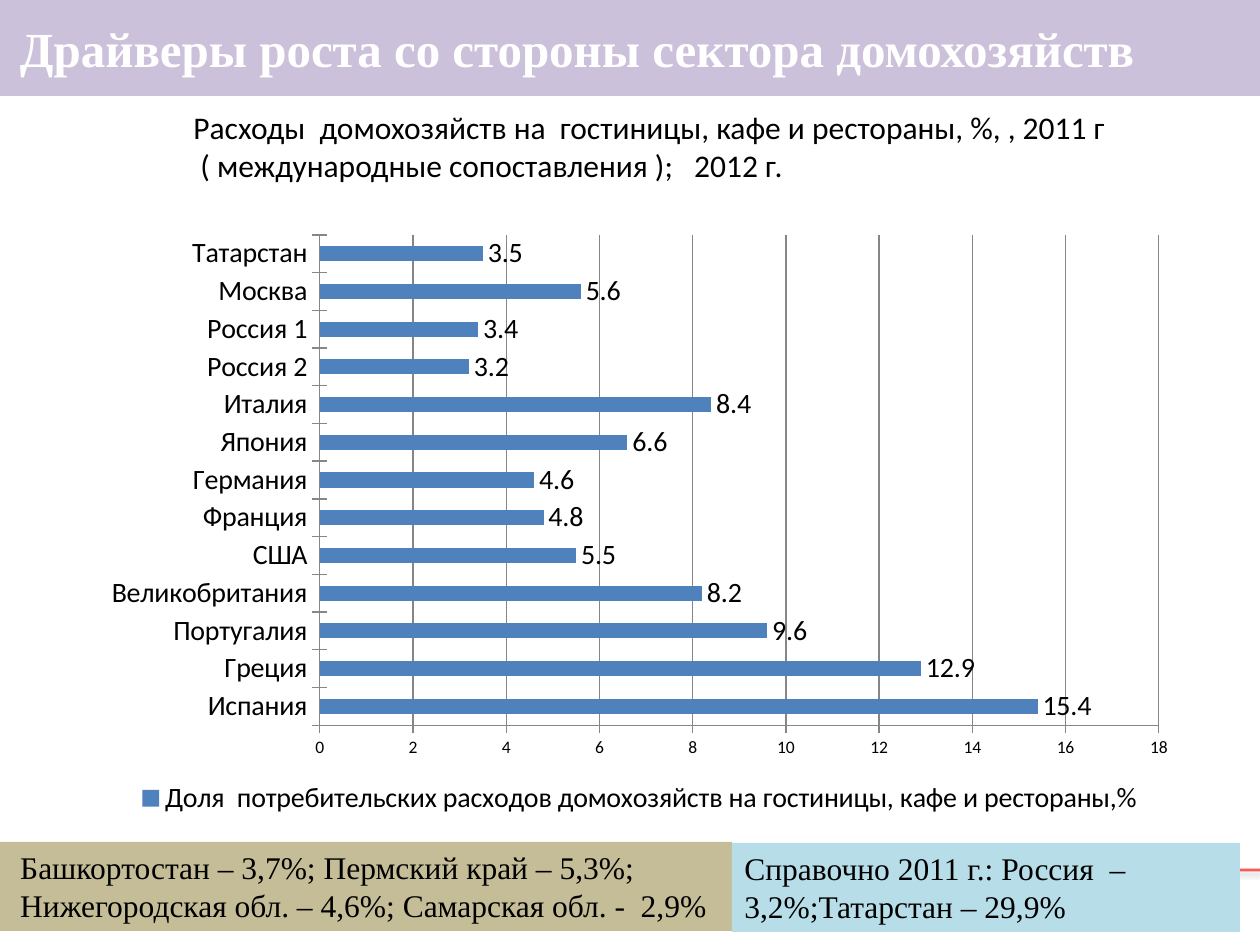
from dataclasses import dataclass

from lxml import etree
from pptx import Presentation
from pptx.chart.data import CategoryChartData
from pptx.dml.color import RGBColor
from pptx.enum.chart import XL_CHART_TYPE, XL_LABEL_POSITION, XL_LEGEND_POSITION, XL_TICK_MARK
from pptx.enum.shapes import MSO_CONNECTOR
from pptx.enum.text import MSO_ANCHOR, MSO_AUTO_SIZE, PP_ALIGN
from pptx.oxml import parse_xml
from pptx.oxml.ns import nsdecls, qn
from pptx.util import Emu, Pt

BAR = XL_CHART_TYPE.BAR_CLUSTERED
BOTTOM = XL_LEGEND_POSITION.BOTTOM
OUTSIDE = XL_LABEL_POSITION.OUTSIDE_END
CROSS = XL_TICK_MARK.CROSS
STRAIGHT = MSO_CONNECTOR.STRAIGHT
MIDDLE = MSO_ANCHOR.MIDDLE
FIT = MSO_AUTO_SIZE.SHAPE_TO_FIT_TEXT
JUSTIFY = PP_ALIGN.JUSTIFY


@dataclass(frozen=True)
class Theme:
    sans: str = "Calibri"
    serif: str = "Times New Roman"
    ink: str = "000000"
    white: str = "FFFFFF"
    lilac: str = "CCC1DA"
    sand: str = "C4BD97"
    aqua: str = "B7DEE8"
    blue: str = "4F81BD"
    gray: str = "868686"
    red: str = "FF0000"
    head: int = 28
    body: int = 18
    label: int = 16
    small: int = 10


def px(n):
    return Emu(round(n * 914400 / 126))


def rgb(code):
    return RGBColor.from_string(code)


class Deck:
    def __init__(self, theme):
        self.theme = theme
        self.prs = Presentation()
        self.prs.slide_width, self.prs.slide_height = px(1260), px(945)
        self.slide = self.prs.slides.add_slide(self.prs.slide_layouts[5])

    def font(self, font, size, name=None, color=None, bold=False):
        font.size, font.bold = Pt(size), bold
        font.name = name or self.theme.sans
        font.color.rgb = rgb(color or self.theme.ink)

    def title(self, text, x, y, w, h):
        t, box = self.theme, self.slide.shapes.title
        box.left, box.top, box.width, box.height = map(px, (x, y, w, h))
        box.fill.solid()
        box.fill.fore_color.rgb = rgb(t.lilac)
        frame = box.text_frame
        frame.text = text
        frame.vertical_anchor = MIDDLE
        frame.margin_left, frame.margin_right = px(20), px(13)
        frame.margin_top = frame.margin_bottom = px(5)
        para = frame.paragraphs[0]
        para.alignment = JUSTIFY
        self.font(para.runs[0].font, t.head, t.serif, t.white, True)

    def text(self, text, x, y, w, h, name, fill=None, wrap=False):
        box = self.slide.shapes.add_textbox(*map(px, (x, y, w, h)))
        if fill:
            box.fill.solid()
            box.fill.fore_color.rgb = rgb(fill)
        frame = box.text_frame
        frame.text = text
        frame.word_wrap, frame.auto_size = wrap, FIT
        for para in frame.paragraphs:
            for run in para.runs:
                self.font(run.font, self.theme.body, name)

    def rule(self, y):
        line = self.slide.shapes.add_connector(STRAIGHT, 0, px(y), px(1260), px(y))
        line.line.width = Pt(1.5)
        line.line.color.rgb = rgb(self.theme.red)
        # Transparency and soft shadow
        props = line._element.spPr
        color = props.find(".//" + qn("a:srgbClr"))
        etree.SubElement(color, qn("a:alpha")).set("val", "64000")
        props.append(parse_xml(
            f'<a:effectLst {nsdecls("a")}><a:outerShdw blurRad="39370" dist="20320" '
            'dir="5400000" rotWithShape="0"><a:srgbClr val="000000">'
            '<a:alpha val="38000"/></a:srgbClr></a:outerShdw></a:effectLst>'))

    def chart(self, name, rows, x, y, w, h, plot):
        t, data = self.theme, CategoryChartData()
        data.categories = [cat for cat, _ in rows]
        data.add_series(name, [val for _, val in rows])
        frame = self.slide.shapes.add_chart(BAR, *map(px, (x, y, w, h)), data)
        chart = frame.chart
        chart.has_title = False
        self.font(chart.font, t.small)
        chart.has_legend = True
        chart.legend.position = BOTTOM
        chart.legend.include_in_layout = False
        self.font(chart.legend.font, t.label)
        # Axes
        for axis, size in ((chart.category_axis, t.label), (chart.value_axis, t.small)):
            axis.major_tick_mark = CROSS
            axis.format.line.color.rgb = rgb(t.gray)
            self.font(axis.tick_labels.font, size)
        axis = chart.value_axis
        axis.minimum_scale, axis.maximum_scale, axis.major_unit = 0, 18, 2
        axis.has_major_gridlines = True
        axis.major_gridlines.format.line.color.rgb = rgb(t.gray)
        # Bars and labels
        bars = chart.plots[0]
        bars.vary_by_categories, bars.gap_width = False, 150
        fill = bars.series[0].format.fill
        fill.solid()
        fill.fore_color.rgb = rgb(t.blue)
        bars.has_data_labels = True
        labels = bars.data_labels
        labels.show_value, labels.position = True, OUTSIDE
        self.font(labels.font, t.label)
        # Fixed inner plot area
        area = chart._chartSpace.chart.plotArea
        for old in area.findall(qn("c:layout")):
            area.remove(old)
        parts = "".join(f'<c:{k} val="{v}"/>' for k, v in zip("xywh", plot))
        area.insert(0, parse_xml(
            f'<c:layout {nsdecls("c")}><c:manualLayout><c:layoutTarget val="inner"/>'
            '<c:xMode val="edge"/><c:yMode val="edge"/>'
            f'{parts}</c:manualLayout></c:layout>'))


SHARES = [
    ("Испания", 15.4), ("Греция", 12.9), ("Португалия", 9.6),
    ("Великобритания", 8.2), ("США", 5.5), ("Франция", 4.8),
    ("Германия", 4.6), ("Япония", 6.6), ("Италия", 8.4),
    ("Россия 2", 3.2), ("Россия 1", 3.4), ("Москва", 5.6), ("Татарстан", 3.5),
]


def main():
    theme = Theme()
    deck = Deck(theme)

    # Heading
    deck.rule(870)
    deck.title("Драйверы роста со стороны сектора домохозяйств", 0, 0, 1260, 96)
    deck.text("Расходы  домохозяйств на  гостиницы, кафе и рестораны, %, , 2011 г\n"
              " ( международные сопоставления );   2012 г.",
              181, 102, 948, 89, theme.sans)

    # Regional notes
    deck.text(" Башкортостан – 3,7%; Пермский край – 5,3%;\n"
              " Нижегородская обл. – 4,6%; Самарская обл. -  2,9%",
              0, 842, 732, 89, theme.serif, theme.sand)
    deck.text("Справочно 2011 г.: Россия  – 3,2%;Татарстан – 29,9%",
              732, 843, 508, 89, theme.serif, theme.aqua, True)

    # Spending by country
    deck.chart("Доля  потребительских расходов домохозяйств на гостиницы, кафе и рестораны,%",
               SHARES, 88, 223, 1104, 598, (0.21, 0.02, 0.76, 0.82))

    deck.prs.save("out.pptx")


if __name__ == "__main__":
    main()
